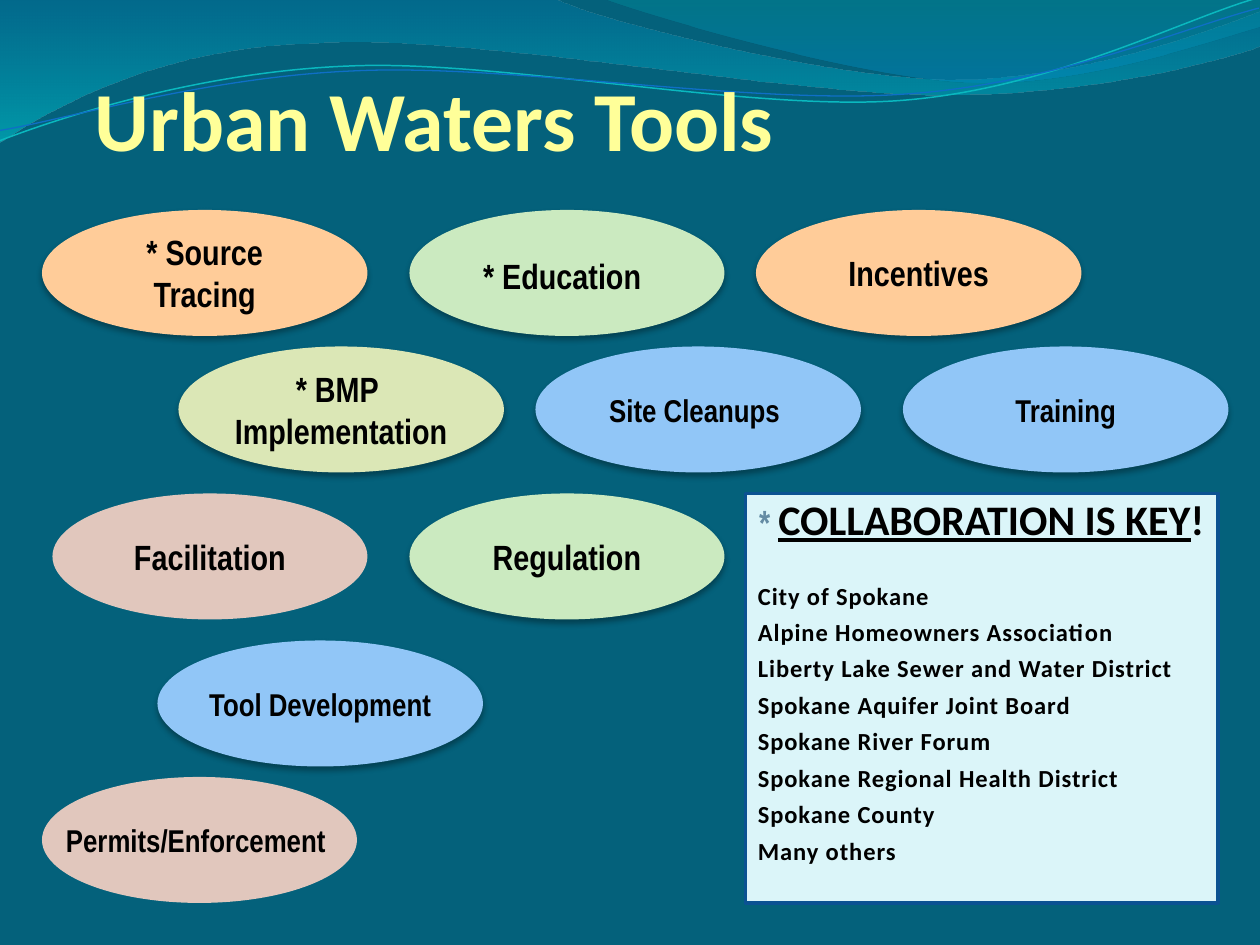
"""Build the Urban Waters Tools slide."""
from pptx import Presentation
from pptx.util import Inches, Pt
from pptx.dml.color import RGBColor
from pptx.enum.shapes import MSO_SHAPE
from pptx.enum.text import MSO_ANCHOR, PP_ALIGN
from pptx.oxml.ns import qn
from lxml.etree import SubElement


def ink(code):
    return RGBColor.from_string(code)


def say(par, text, size, face="Arial Narrow", code="000000"):
    run = par.add_run()
    run.text = text
    run.font.size = Pt(size)
    run.font.name = face
    run.font.bold = True
    run.font.color.rgb = ink(code)
    return run


deck = Presentation()
deck.slide_width, deck.slide_height = Inches(10), Inches(7.5)
unit = deck.slide_width // 120
page = deck.slides.add_slide(deck.slide_layouts[6])
page.background.fill.solid()
page.background.fill.fore_color.rgb = ink("04617B")

fills = [
    ([[(0, 0)],
      [(4.4, -0.01), (4.76, 0.17), (6.64, 0.63), (7.58, 0.63),
       (8.53, 0.63), (9.58, 0.26), (10, 0.09)],
      [(10.01, 0.36), (9.83, 0.44), (8.7, 0.76), (7.46, 0.75),
       (6.22, 0.75), (3.82, 0.28), (2.57, 0.34),
       (1.29, 0.36), (0.46, 0.83), (-0.01, 1.13)]],
     [("0074A1", 0, 45), ("00C6CF", 1, 55)]),
    ([[(4.79, -0.01), (5.09, 0.11), (6.82, 0.62), (7.69, 0.65),
       (8.56, 0.69), (9.61, 0.32), (10, 0.21)], [(10, 0)]],
     [("00A1A9", 0, 30), ("008BBF", 0.8, 45)]),
]
lines = [
    ([[(-0.02, 0.88), (0.47, 0.72), (1.58, 0.41), (2.77, 0.42),
       (3.95, 0.42), (5.92, 0.93), (7.12, 0.9),
       (8.32, 0.87), (9.4, 0.36), (10, 0.22)]], ("0AB8BF", 0.85)),
    ([[(-0.02, 0.8), (0.45, 0.75), (1.64, 0.45), (2.83, 0.46),
       (4.03, 0.46), (5.96, 0.88), (7.16, 0.85),
       (8.36, 0.83), (9.43, 0.42), (10.01, 0.3)]], ("0F6FC6", 0.75)),
]
for strokes, look in fills + lines:
    solid = isinstance(look, list)
    dots = [(round(x * 100), round(y * 100)) for stroke in strokes for x, y in stroke]
    pen = page.shapes.build_freeform(*dots[0], scale=Inches(0.01))
    pen.add_line_segments(dots[1:], close=solid)
    wave = pen.convert_to_shape()
    wave.shadow.inherit = False
    route = next(wave._element.iter(qn("a:path")))
    nodes = iter(list(route))
    for stroke in strokes:
        next(nodes)
        for _ in range(len(stroke) // 3):
            curve = next(nodes)
            curve.tag = qn("a:cubicBezTo")
            for _ in range(2):
                extra = next(nodes)
                curve.append(extra[0])
                route.remove(extra)
    if solid:
        wave.line.fill.background()
        wave.fill.gradient()
        wave.fill.gradient_angle = 270
        for stop, (code, place, _) in zip(wave.fill.gradient_stops, look):
            stop.color.rgb = ink(code)
            stop.position = place
        tints = list(wave._element.spPr.iter(qn("a:srgbClr")))
        for tint, (_, _, share) in zip(tints, look):
            SubElement(tint, qn("a:alpha"), val=str(share * 1000))
    else:
        wave.rotation = 357.3
        wave.fill.background()
        wave.line.color.rgb = ink(look[0])
        wave.line.width = Pt(look[1])

title = page.shapes.add_textbox(9 * unit, 5 * unit, 102 * unit, 11 * unit)
frame = title.text_frame
frame.word_wrap = True
frame.vertical_anchor = MSO_ANCHOR.BOTTOM
frame.margin_left = frame.margin_right = frame.margin_bottom = 0
say(frame.paragraphs[0], "Urban Waters Tools", 48, "Calibri", "FFFF99")

card = page.shapes.add_shape(MSO_SHAPE.RECTANGLE, 71 * unit, 47 * unit,
                             45 * unit, 39 * unit)
card.shadow.inherit = False
card.fill.solid()
card.fill.fore_color.rgb = ink("DBF5F9")
card.line.color.rgb = ink("0B5292")
card.line.width = Pt(2)
frame = card.text_frame
frame.word_wrap = True
frame.vertical_anchor = MSO_ANCHOR.TOP
frame.margin_top = 0
head = frame.paragraphs[0]
head.alignment = PP_ALIGN.CENTER
head.space_after = Pt(21)
say(head, "* ", 20, code="648CA4")
say(head, "COLLABORATION IS KEY", 24, "Calibri").font.underline = True
say(head, "!", 24, "Calibri")
for name in ("City of Spokane", "Alpine Homeowners Association",
             "Liberty Lake Sewer and Water District",
             "Spokane Aquifer Joint Board", "Spokane River Forum",
             "Spokane Regional Health District", "Spokane County",
             "Many others"):
    par = frame.add_paragraph()
    par.alignment = PP_ALIGN.LEFT
    par.space_after = Pt(4)
    run = say(par, name, 14, "Calibri")
    run._r.get_or_add_rPr().set("spc", "50")

peach, green, olive, blue, rose = "FFCC99", "CBEAC0", "DBE7B6", "91C6F7", "E1C7BD"
tools = [
    (72, 20, 31, peach, 20, [["Incentives"]]),
    (39, 20, 30, green, 20, [["* ", "Education", " "]]),
    (17, 33, 31, olive, 20, [["* ", "BMP "], ["Implementation"]]),
    (51, 33, 31, blue, 18, [["Site Cleanups "]]),
    (4, 74, 30, rose, 18, [["Permits/Enforcement "]]),
    (86, 33, 31, blue, 18, [["Training"]]),
    (5, 47, 30, rose, 20, [["Facilitation"]]),
    (39, 47, 30, green, 20, [["Regulation"]]),
    (15, 61, 31, blue, 18, [["Tool Development"]]),
    (4, 20, 31, peach, 20, [["* ", "Source"], ["Tracing"]]),
]
for col, row, wide, code, size, rows in tools:
    oval = page.shapes.add_shape(MSO_SHAPE.OVAL, col * unit, row * unit,
                                 wide * unit, 12 * unit)
    oval.shadow.inherit = False
    oval.fill.solid()
    oval.fill.fore_color.rgb = ink(code)
    oval.line.fill.background()
    if code != rose:
        glow = oval._element.spPr.find(qn("a:effectLst"))
        shade = SubElement(glow, qn("a:outerShdw"), blurRad=str(Pt(3.5)),
                           dist=str(Pt(2.2)), dir="5400000", rotWithShape="0")
        tint = SubElement(shade, qn("a:srgbClr"), val=str(ink("000000")))
        SubElement(tint, qn("a:alpha"), val="32000")
    frame = oval.text_frame
    frame.word_wrap = False
    frame.vertical_anchor = MSO_ANCHOR.MIDDLE
    for place, words in enumerate(rows):
        par = frame.add_paragraph() if place else frame.paragraphs[0]
        par.alignment = PP_ALIGN.CENTER
        for word in words:
            run = say(par, word, size)
            if word == " ":
                run.font.size = Pt(24)
                run.font.bold = False

deck.save("out.pptx")
